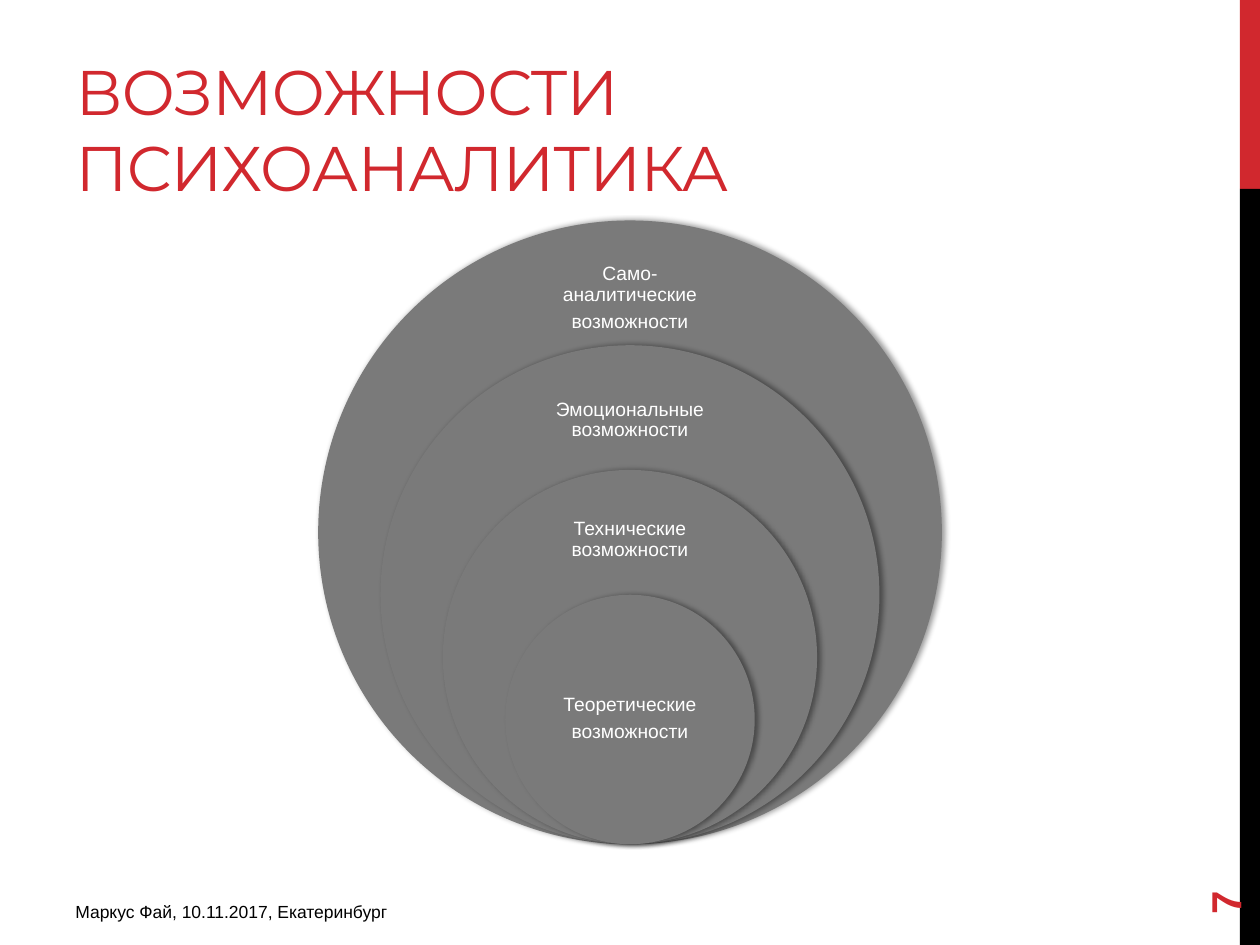
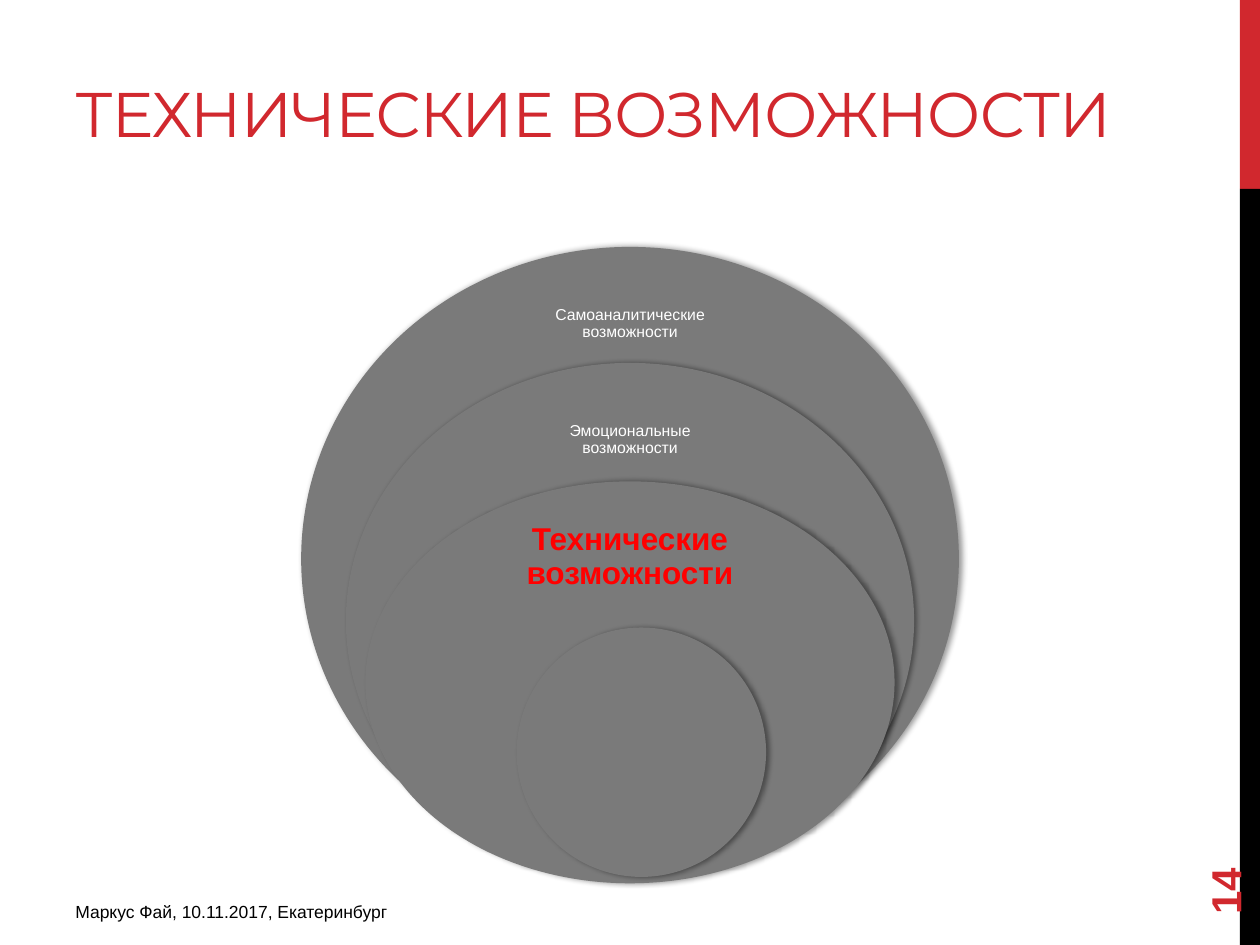
from lxml import etree
from pptx import Presentation
from pptx.dml.color import RGBColor
from pptx.enum.shapes import MSO_SHAPE
from pptx.enum.text import MSO_ANCHOR, MSO_AUTO_SIZE, PP_ALIGN
from pptx.oxml.ns import qn
from pptx.util import Emu, Pt

RECT, OVAL = MSO_SHAPE.RECTANGLE, MSO_SHAPE.OVAL
LEFT, CENTER = PP_ALIGN.LEFT, PP_ALIGN.CENTER
TOP, MIDDLE, BOTTOM = MSO_ANCHOR.TOP, MSO_ANCHOR.MIDDLE, MSO_ANCHOR.BOTTOM

PX = 9144  # 100 px to the inch
WIDTH, HEIGHT = 1000, 750
TITLE_ONLY = 5
CENTER_X = 500
MARGIN = 50

RED, BLACK, GRAY, WHITE, ACCENT = "D1282E", "000000", "7A7A7A", "FFFFFF", "FF0000"
TITLE_FONT = dict(name="Montserrat", size=Pt(36), bold=False)
FOOTER_FONT = dict(name="Arial", size=Pt(10))
NUMBER_FONT = dict(name="Arial", size=Pt(24), bold=True)
FOOTER = "Маркус Фай, 10.11.2017, Екатеринбург"


def px(n):
    return Emu(round(n * PX))


def rgb(color):
    return RGBColor.from_string(color)


def set_attrs(obj, values):
    for name, value in values.items():
        setattr(obj, name, value)


class Deck:
    def __init__(self):
        self.prs = Presentation()
        self.prs.slide_width, self.prs.slide_height = px(WIDTH), px(HEIGHT)
        self.s = None

    def place(self, sp, x, y, w, h):
        set_attrs(sp, dict(left=px(x), top=px(y), width=px(w), height=px(h)))

    def fill_text(self, sp, paragraphs, font, color, anchor=TOP, paragraph_format=None, inset=None):
        tf = sp.text_frame
        set_attrs(tf, dict(word_wrap=True, auto_size=MSO_AUTO_SIZE.NONE, vertical_anchor=anchor))
        if inset is not None:
            set_attrs(tf, dict(margin_left=px(inset), margin_top=px(inset),
                               margin_right=px(inset), margin_bottom=px(inset)))
        for i, text in enumerate(paragraphs):
            p = tf.add_paragraph() if i else tf.paragraphs[0]
            set_attrs(p, paragraph_format or dict(alignment=LEFT))
            r = p.add_run()
            r.text = text
            set_attrs(r.font, font)
            r.font.color.rgb = rgb(color)

    def shape(self, kind, x, y, w, h, color):
        sp = self.s.shapes.add_shape(kind, px(x), px(y), px(w), px(h))
        sp.fill.solid()
        sp.fill.fore_color.rgb = rgb(color)
        sp.line.fill.background()
        sp.shadow.inherit = False
        return sp

    def text(self, x, y, w, h, paragraphs, font, color, **layout):
        sp = self.s.shapes.add_textbox(px(x), px(y), px(w), px(h))
        self.fill_text(sp, paragraphs, font, color, **layout)
        return sp

    def slide(self, title, number, title_width, title_height):
        self.s = self.prs.slides.add_slide(self.prs.slide_layouts[TITLE_ONLY])
        self.shape(RECT, 984, 0, 16, 150, RED)
        self.shape(RECT, 984, 150, 16, 600, BLACK)
        sp = self.s.shapes.title
        self.place(sp, MARGIN, 17, title_width, title_height)
        self.fill_text(sp, [title], TITLE_FONT, RED, anchor=BOTTOM)
        r = sp.text_frame.paragraphs[0].runs[0]
        r._r.get_or_add_rPr().set("spc", "-60")
        self.text(MARGIN, 710, 375, 31, [FOOTER], FOOTER_FONT, BLACK)
        sp = self.text(900, 644, 144, 40, [str(number)], NUMBER_FONT, RED, anchor=MIDDLE)
        sp.rotation = 270

    def ring(self, y, w, h, center=CENTER_X):
        """Draw an ellipse with a soft shadow to its right."""
        sp = self.shape(OVAL, center - w / 2, y, w, h, GRAY)
        effects = sp._element.spPr.find(qn("a:effectLst"))
        shadow = etree.SubElement(effects, qn("a:outerShdw"), blurRad=str(Pt(3.1)),
                                  dist=str(Pt(1.8)), dir="0", rotWithShape="0")
        color = etree.SubElement(shadow, qn("a:srgbClr"), val=BLACK)
        etree.SubElement(color, qn("a:alpha"), val="40000")

    def label(self, y, w, h, paragraphs, size, inset, color=WHITE, bold=False):
        spacing = dict(alignment=CENTER, line_spacing=0.9, space_after=Pt(0.35 * size))
        self.text(CENTER_X - w / 2, y, w, h, paragraphs,
                  dict(name="Arial", size=Pt(size), bold=bold), color,
                  anchor=MIDDLE, paragraph_format=spacing, inset=inset)


def analyst_slide(deck):
    deck.slide("ВОЗМОЖНОСТИ ПСИХОАНАЛИТИКА", 7, 633, 150)
    diameter, step, bottom = 495, 99, 670
    labels = [
        (200, 138, 74, ["Само-аналитические", "возможности"]),
        (298, 138, 71, ["Эмоциональные возможности"]),
        (395, 138, 67, ["Технические возможности"]),
        (521, 140, 99, ["Теоретические", "возможности"]),
    ]
    for i, (y, w, h, paragraphs) in enumerate(labels):
        d = diameter - i * step
        deck.ring(bottom - d, d, d)
        deck.label(y, w, h, paragraphs, size=11, inset=9)


def technical_slide(deck):
    deck.slide("ТЕХНИЧЕСКИЕ ВОЗМОЖНОСТИ", 14, 902, 107)
    small = dict(size=9, inset=7)
    highlight = dict(size=18, inset=14, color=ACCENT, bold=True)
    rings = [
        ((196, 522, 495), (220, 146, 74), "Самоаналитические возможности", small),
        ((288, 451, 409), (312, 158, 74), "Эмоциональные возможности", small),
        ((382, 420, 319), (406, 196, 72), "Технические возможности", highlight),
    ]
    for ring, box, text, style in rings:
        deck.ring(*ring)
        deck.label(*box, [text], **style)
    deck.ring(498, 198, 198, center=509)


def main():
    deck = Deck()
    analyst_slide(deck)
    technical_slide(deck)
    deck.prs.save("out.pptx")


if __name__ == "__main__":
    main()
